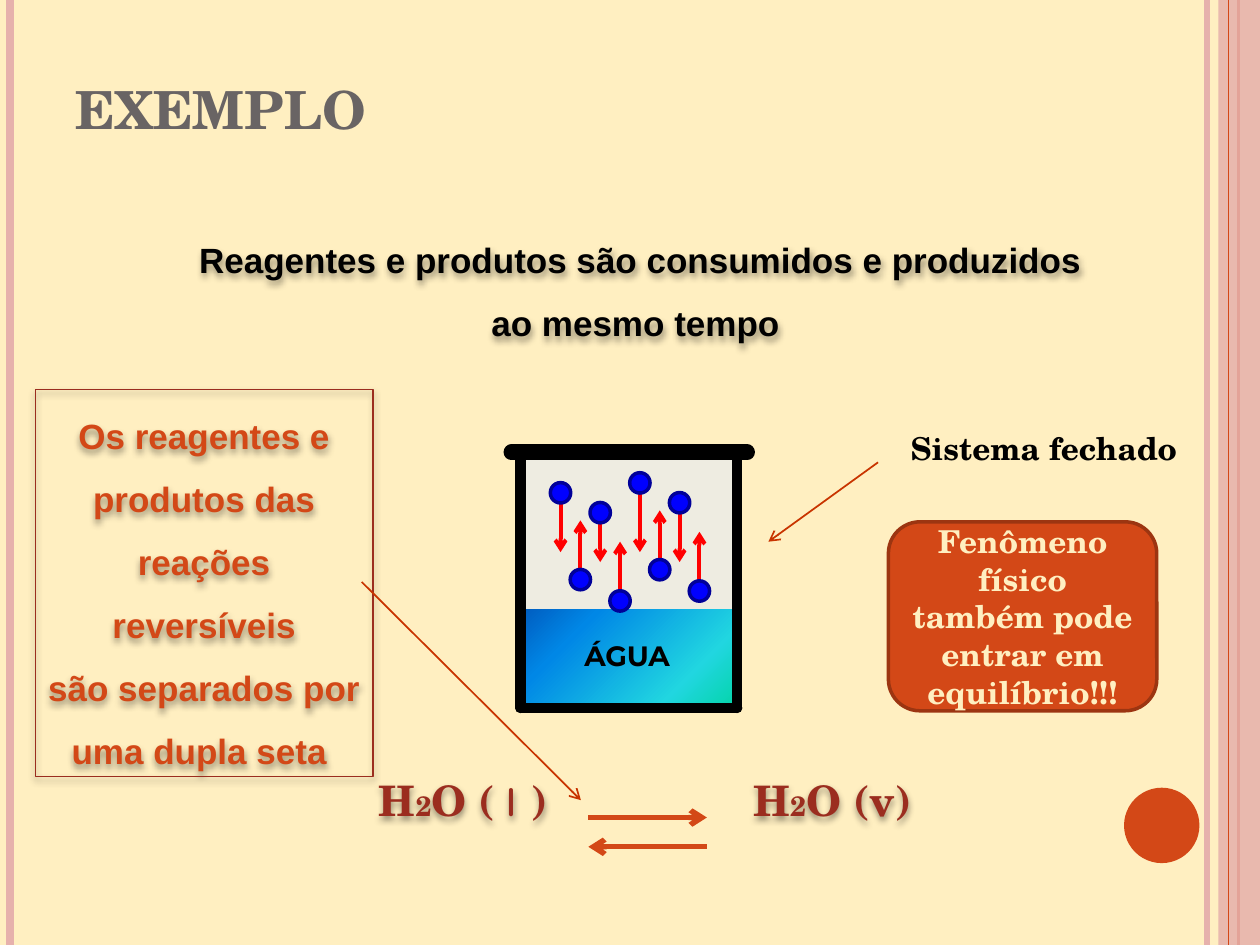
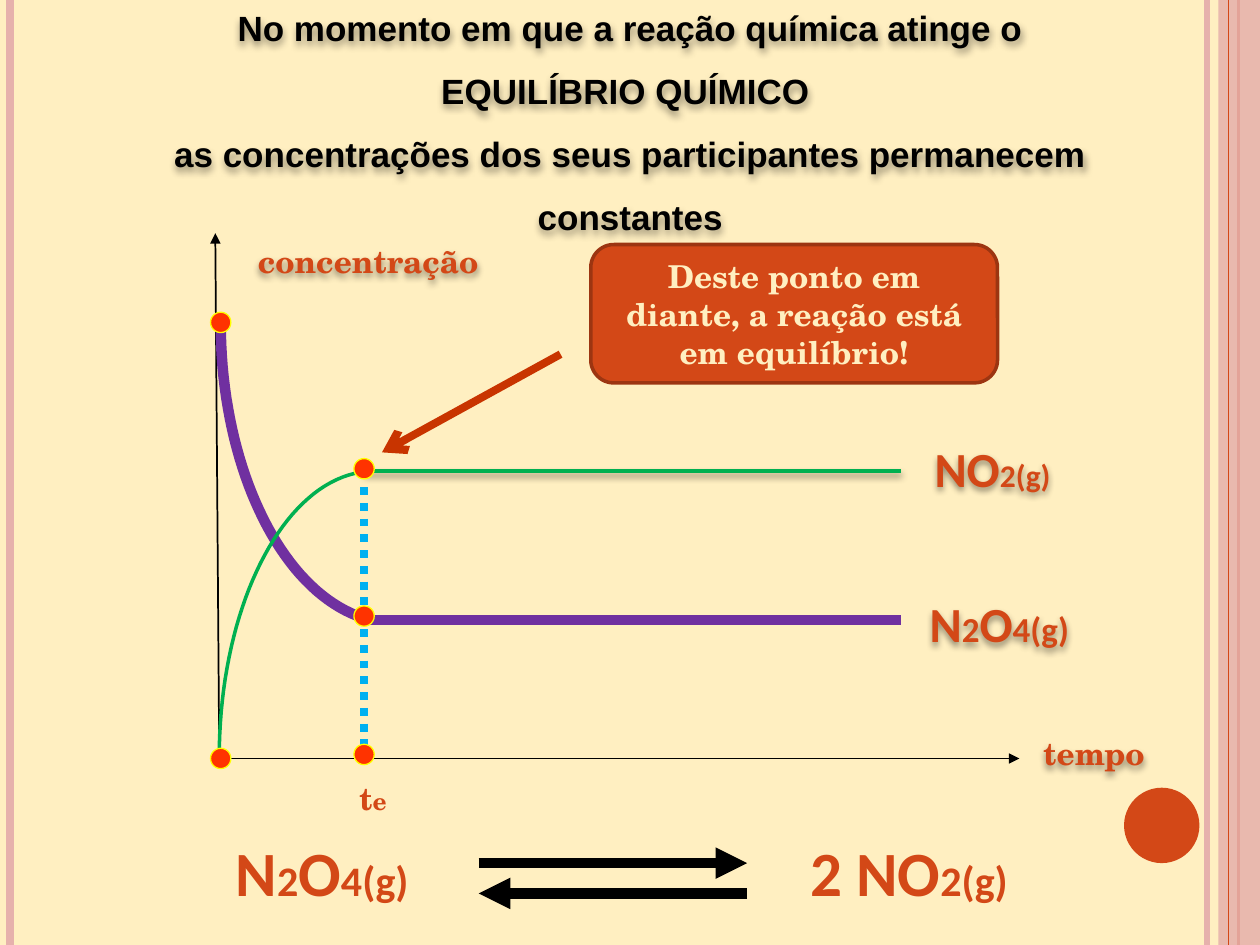
from dataclasses import dataclass

from lxml.etree import SubElement
from pptx import Presentation
from pptx.dml.color import RGBColor
from pptx.enum.dml import MSO_LINE
from pptx.enum.shapes import MSO_CONNECTOR, MSO_SHAPE as Preset
from pptx.enum.text import MSO_ANCHOR as Anchor, PP_ALIGN as Align
from pptx.oxml import parse_xml
from pptx.oxml.ns import nsdecls, qn
from pptx.util import Cm, Pt


@dataclass(frozen=True)
class Theme:
    paper: str = "FFEFC1"
    rose: str = "E6B1AC"
    orange: str = "D34817"
    rust: str = "9C3511"
    wine: str = "9B2D1F"
    pointer: str = "C83400"
    gray: str = "696464"
    black: str = "000000"
    red: str = "FF0000"
    gas: str = "EEECE1"
    molecule: str = "0000FF"
    molecule_edge: str = "000099"
    purple: str = "7030A0"
    green: str = "00B050"
    sky: str = "00B0F0"
    dot: str = "FF3300"
    dot_edge: str = "FFFF00"
    serif: str = "TeX Gyre Schola"
    sans: str = "Arial"
    formula: str = "Calibri"
    title: int = 30
    body: int = 20
    label: int = 18


theme = Theme()
TITLE = {"name": theme.serif, "size": theme.title, "color": theme.gray}
STATEMENT = {"name": theme.sans, "size": theme.body, "color": theme.black}
WARM_STATEMENT = STATEMENT | {"color": theme.orange}
LABEL = {"name": theme.serif, "size": theme.label, "color": theme.orange}
DARK_LABEL = LABEL | {"color": theme.black}
NOTE = LABEL | {"color": theme.paper}
WATER_LABEL = {"name": "Montserrat", "size": 16, "color": theme.black}
PHASE = {"name": theme.serif, "size": 24, "color": theme.wine}
FORMULA = {"name": theme.formula, "size": 28, "color": theme.orange}
EQUATION = FORMULA | {"size": 36}

SHADOW = (
    f'<a:outerShdw {nsdecls("a")} blurRad="50800" dist="25400" dir="5400000">'
    '<a:srgbClr val="000000"><a:alpha val="42000"/></a:srgbClr></a:outerShdw>'
)
WATER = (
    f'<a:gradFill {nsdecls("a")} rotWithShape="1"><a:gsLst>'
    '<a:gs pos="0"><a:srgbClr val="03D4A8"/></a:gs>'
    '<a:gs pos="25000"><a:srgbClr val="21D6E0"/></a:gs>'
    '<a:gs pos="75000"><a:srgbClr val="0087E6"/></a:gs>'
    '<a:gs pos="100000"><a:srgbClr val="005CBF"/></a:gs></a:gsLst>'
    '<a:path path="circle"><a:fillToRect l="100000" t="100000"/></a:path></a:gradFill>'
)


def draw_line(page, start, end, color, width, arrow=None, dash=None, cap=None, shadow=False):
    line = page.shapes.add_connector(
        MSO_CONNECTOR.STRAIGHT, *[Cm(value) for value in (*start, *end)])
    line.line.color.rgb = RGBColor.from_string(color)
    line.line.width = Pt(width)
    if dash:
        line.line.dash_style = dash
    stroke = line.line._get_or_add_ln()
    if cap:
        stroke.set("cap", cap)
    if arrow:
        SubElement(stroke, qn("a:tailEnd"), type=arrow)
    effects = SubElement(line._element.spPr, qn("a:effectLst"))
    if shadow:
        effects.append(parse_xml(SHADOW))
    return line


def draw_box(page, area, preset=None, fill=None, line=None, paragraphs=(), style=None,
             align=Align.LEFT, anchor=Anchor.TOP, spacing=1.0, wrap=True, shadow=False):
    """Add a preset shape or, without one, a text box; paragraphs are lists of (text, changes)."""
    area = [Cm(value) for value in area]
    box = page.shapes.add_shape(preset, *area) if preset else page.shapes.add_textbox(*area)
    if fill:
        box.fill.solid()
        box.fill.fore_color.rgb = RGBColor.from_string(fill)
    else:
        box.fill.background()
    if line:
        box.line.color.rgb = RGBColor.from_string(line[0])
        box.line.width = Pt(line[1])
    else:
        box.line.fill.background()
    box.shadow.inherit = False
    if shadow:
        box._element.spPr.find(qn("a:effectLst")).append(parse_xml(SHADOW))
    frame = box.text_frame
    frame.word_wrap = wrap
    frame.vertical_anchor = anchor
    for index, spans in enumerate(paragraphs):
        para = frame.add_paragraph() if index else frame.paragraphs[0]
        para.alignment = align
        para.line_spacing = spacing
        for text, changes in spans:
            span = para.add_run()
            span.text = text
            look = style | changes
            font = {"name": look["name"], "size": Pt(look["size"]), "bold": True}
            for key, value in font.items():
                setattr(span.font, key, value)
            span.font.color.rgb = RGBColor.from_string(look["color"])
    return box


deck = Presentation()
deck.slide_width, deck.slide_height = Cm(25.4), Cm(19.05)
pages = [deck.slides.add_slide(deck.slide_layouts[6]) for _ in range(2)]
example, equilibrium = pages

# Shared side bands and page circle
for page in pages:
    page.background.fill.solid()
    page.background.fill.fore_color.rgb = RGBColor.from_string(theme.paper)
    for x, color, width in [(24.33, theme.rose, 3), (0.2, theme.rose, 4.5),
                            (24.97, theme.orange, 1.5)]:
        draw_line(page, (x, 0), (x, 19.05), color, width)
    band = draw_box(page, (24.56, 0, 0.84, 19.05), Preset.RECTANGLE, theme.rose)
    band_color = band._element.spPr.find(qn("a:solidFill")).find(qn("a:srgbClr"))
    SubElement(band_color, qn("a:alpha"), val="87000")
    draw_line(page, (24.77, 0), (24.77, 19.05), theme.orange, 0.75)
    draw_box(page, (22.66, 15.88, 1.52, 1.52), Preset.OVAL, theme.orange)

# Slide 1: water in a closed vessel
draw_box(example, (1.27, 1.32, 20.75, 1.63), paragraphs=[[("EXEMPLO", {})]],
         style=TITLE, anchor=Anchor.BOTTOM)
draw_box(example, (3.51, 4.32, 18.8, 2.67), style=STATEMENT, align=Align.CENTER,
         anchor=Anchor.MIDDLE, spacing=1.5, shadow=True,
         paragraphs=[[("Reagentes e produtos são consumidos e produzidos ao mesmo tempo ", {})]])

left, right, lid, surface, bottom = 10.49, 14.86, 9.12, 12.29, 14.27
draw_box(example, (left, lid, right - left, 3.38), Preset.RECTANGLE, theme.gas)
draw_line(example, (10.31, lid), (15.06, lid), theme.black, 9, cap="rnd")
water = draw_box(example, (left, surface, right - left, bottom - surface), Preset.RECTANGLE)
water_fill = water._element.spPr.find(qn("a:noFill"))
water_fill.getparent().replace(water_fill, parse_xml(WATER))
for start, end in [((left, bottom), (left, lid)), ((left, bottom), (right, bottom)),
                   ((right, bottom), (right, lid))]:
    draw_line(example, start, end, theme.black, 6, cap="rnd")
draw_box(example, (11.53, 12.75, 2.34, 0.94), paragraphs=[[("ÁGUA", {})]],
         style=WATER_LABEL, wrap=False)

ball = 0.41
molecules = [(9.73, 11.13), (11.48, 10.49), (10.13, 11.33), (11.91, 10.92),
             (9.53, 11.13), (11.28, 10.29), (9.93, 11.33), (11.71, 10.72)]
for index, (top, tip) in enumerate(molecules):
    x = 11.3 + 0.4 * index
    draw_line(example, (x, top), (x, tip), theme.red, 2.25, arrow="arrow")
    draw_box(example, (x - ball / 2, top, ball, ball), Preset.OVAL,
             theme.molecule, (theme.molecule_edge, 2))

small = {"size": 16}
liquid = [("H", {}), ("2", small), ("O ( ", {}), ("l ", {"name": "Comic Neue"}), (")", {})]
vapor = [("H", {}), ("2", small), ("O (v)", {})]
for x, spans in [(7.39, liquid), (14.94, vapor)]:
    draw_box(example, (x, 15.49, 4.4, 1.2), paragraphs=[spans], style=PHASE, shadow=True)
for start, end in [((11.86, 16.48), (14.25, 16.48)), ((14.25, 17.07), (11.86, 17.07))]:
    draw_line(example, start, end, theme.orange, 3, arrow="arrow")

draw_box(example, (18.11, 8.53, 5.97, 1.02), paragraphs=[[("Sistema fechado", {})]],
         style=DARK_LABEL, wrap=False)
draw_box(example, (0.71, 7.85, 6.81, 7.8), Preset.RECTANGLE, line=(theme.wine, 0.75),
         style=WARM_STATEMENT, align=Align.CENTER, anchor=Anchor.MIDDLE, spacing=1.5,
         shadow=True,
         paragraphs=[[("Os reagentes e produtos das reações reversíveis", {})],
                     [("são separados por uma dupla seta ", {})]])
for start, end in [((17.7, 9.32), (15.49, 10.92)), ((7.29, 11.73), (11.71, 16.13))]:
    draw_line(example, start, end, theme.pointer, 1, arrow="arrow")

# Rounded notes of both slides
for page, area, text in [
    (example, (17.91, 10.52, 5.41, 3.81), "Fenômeno físico também pode entrar em equilíbrio!!!"),
    (equilibrium, (11.91, 4.93, 8.2, 2.79), "Deste ponto em diante, a reação está em equilíbrio!"),
]:
    draw_box(page, area, Preset.ROUNDED_RECTANGLE, theme.orange, (theme.rust, 2),
             [[(text, {})]], NOTE, Align.CENTER, Anchor.MIDDLE)

# Slide 2: concentrations against time
draw_box(equilibrium, (1.3, 0.28, 22.81, 3.94), style=STATEMENT, align=Align.CENTER,
         anchor=Anchor.MIDDLE, spacing=1.5, shadow=True,
         paragraphs=[[("No momento em que a reação química atinge o", {})],
                     [("EQUILÍBRIO QUÍMICO ", {})],
                     [("as concentrações dos seus participantes permanecem constantes", {})]])

origin = (4.42, 15.29)
balance_x, product_y, reagent_y, plateau_end = 7.34, 9.5, 12.5, 18.16
for end in [(4.34, 4.7), (20.55, 15.29)]:
    draw_line(equilibrium, origin, end, theme.black, 1, arrow="triangle")

curves = [
    ([(7.47, 12.5), (5.74, 12.07), (4.45, 9.5), (4.45, 6.5)], theme.purple, 6),
    ([origin, (4.42, 12.09), (5.82, 9.5), (7.54, 9.5)], theme.green, 2),
]
steps = 40
for controls, color, width in curves:
    points = []
    for step in range(steps + 1):
        t = step / steps
        weights = ((1 - t) ** 3, 3 * t * (1 - t) ** 2, 3 * t ** 2 * (1 - t), t ** 3)
        points.append([Cm(sum(weight * control[axis] for weight, control
                              in zip(weights, controls))) for axis in (0, 1)])
    builder = equilibrium.shapes.build_freeform(*points[0])
    builder.add_line_segments(points[1:], close=False)
    curve = builder.convert_to_shape()
    curve.shadow.inherit = False
    curve.fill.background()
    curve.line.color.rgb = RGBColor.from_string(color)
    curve.line.width = Pt(width)

draw_line(equilibrium, (balance_x, product_y), (plateau_end, product_y),
          theme.green, 2, shadow=True)
draw_line(equilibrium, (balance_x, product_y), (balance_x, origin[1]),
          theme.sky, 4.5, dash=MSO_LINE.ROUND_DOT)
draw_line(equilibrium, (balance_x, reagent_y), (plateau_end, reagent_y), theme.purple, 6)

dot = 0.41
for x, y in [(4.45, 15.29), (4.45, 6.5), (balance_x, 9.45), (balance_x, 12.42),
             (balance_x, 15.21)]:
    draw_box(equilibrium, (x - dot / 2, y - dot / 2, dot, dot), Preset.OVAL,
             theme.dot, (theme.dot_edge, 0.75))

for area, spans, shadow in [
    ((4.95, 4.75, 5, 1.02), [("concentração", {})], True),
    ((20.78, 14.68, 2.59, 1.02), [("tempo", {})], True),
    ((6.99, 15.57, 1.07, 1.02), [("t", {}), ("e", {"size": 14})], False),
]:
    draw_box(equilibrium, area, paragraphs=[spans], style=LABEL, wrap=False, shadow=shadow)

for area, symbols, style, low_size, shadow in [
    ((18.49, 11.84, 3.76, 1.32), ["N", "2", "O", "4(g)"], FORMULA, 20, True),
    ((18.59, 8.71, 3.2, 1.32), ["NO", "2(g)"], FORMULA, 18, True),
    ((4.5, 16.66, 4.52, 1.68), ["N", "2", "O", "4(g)"], EQUATION, 24, False),
    ((16.08, 16.66, 5.21, 1.68), ["2 NO", "2(g)"], EQUATION, 24, False),
]:
    spans = [(symbol, {"size": low_size} if index % 2 else {})
             for index, symbol in enumerate(symbols)]
    formula = draw_box(equilibrium, area, paragraphs=[spans], style=style,
                       anchor=Anchor.MIDDLE, wrap=False, shadow=shadow)
    formula.text_frame.margin_bottom = 0

for start, end in [((9.65, 17.4), (15.06, 17.4)), ((15.06, 18.01), (9.65, 18.01))]:
    draw_line(equilibrium, start, end, theme.black, 6, arrow="triangle")
draw_line(equilibrium, (11.3, 7.14), (7.7, 9.12), theme.pointer, 4.5, arrow="arrow")

deck.save("out.pptx")
